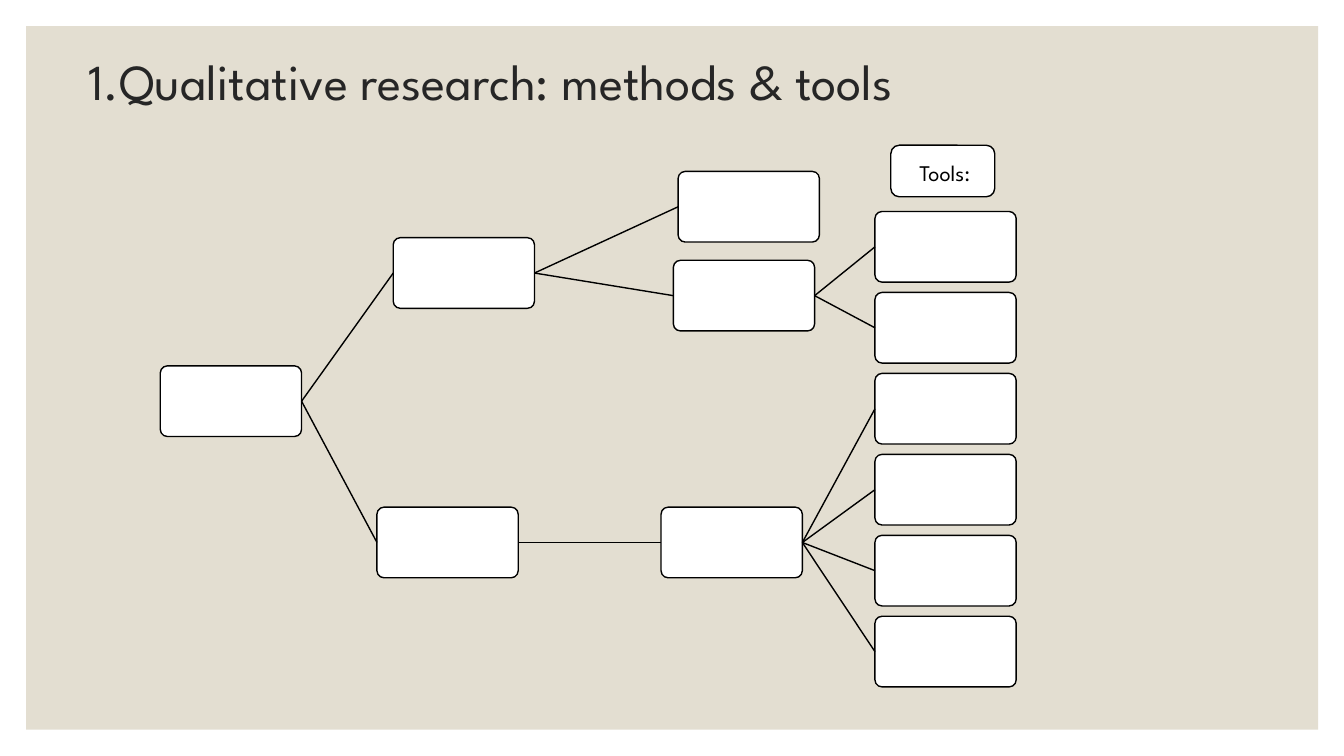
import pptx
import pptx.util
import pptx.dml.color
import pptx.enum.shapes
import pptx.enum.text
import lxml.etree

Cm = pptx.util.Cm
Shape = pptx.enum.shapes.MSO_SHAPE
Align = pptx.enum.text.PP_ALIGN
FONT = "League Spartan"
NODE_W, NODE_H = 3.56, 1.78


def tint(code):
    """Turn a hex string into a colour."""
    return pptx.dml.color.RGBColor.from_string(code)


def write(shape, text, size=16, color="000000", align=Align.LEFT, space=1.0):
    """Put formatted text, centred in height, into a shape."""
    frame = shape.text_frame
    frame.word_wrap = True
    frame.vertical_anchor = pptx.enum.text.MSO_ANCHOR.MIDDLE
    para = frame.paragraphs[0]
    para.alignment = align
    para.line_spacing = space
    run = para.add_run()
    run.text = text
    run.font.name = FONT
    run.font.size = pptx.util.Pt(size)
    run.font.color.rgb = tint(color)


def panel(slide, kind, left, top, width, height, fill="FFFFFF", line="000000"):
    """Add a filled shape, outlined if a line colour is given."""
    shape = slide.shapes.add_shape(kind, Cm(left), Cm(top), Cm(width), Cm(height))
    shape.shadow.inherit = False
    shape.fill.solid()
    shape.fill.fore_color.rgb = tint(fill)
    if line:
        shape.line.color.rgb = tint(line)
        shape.line.width = pptx.util.Pt(1)
    else:
        shape.line.fill.background()
    return shape


def link(slide, start, end):
    """Join the right side of one node to the left side of another."""
    line = slide.shapes.add_connector(
        pptx.enum.shapes.MSO_CONNECTOR.STRAIGHT, 0, 0, 0, 0)
    line.begin_connect(start, 3)
    line.end_connect(end, 1)
    line.line.color.rgb = tint("000000")
    line.line.width = pptx.util.Pt(1)
    props = line.element.spPr
    lxml.etree.SubElement(props, pptx.oxml.ns.qn("a:effectLst"))


def title(slide, left, top, width, height):
    """Write the slide title in the given box."""
    box = slide.shapes.add_textbox(Cm(left), Cm(top), Cm(width), Cm(height))
    write(box, "1.Qualitative research: methods & tools",
          size=36, color="262626", space=0.9)


def tree(slide, left, top):
    """Draw the method tree from its top left corner."""
    spots = {
        "root": (0, 4.9),
        "upper": (5.87, 1.67),
        "lower": (5.46, 8.46),
        "first": (13.05, 0),
        "second": (12.93, 2.24),
        "third": (12.62, 8.46),
    }
    tools = [f"tool {i}" for i in range(6)]
    for i, name in enumerate(tools):
        spots[name] = (18.01, 1.01 + 2.04 * i)
    nodes = {}
    for name, (x, y) in spots.items():
        node = panel(slide, Shape.ROUNDED_RECTANGLE,
                     left + x, top + y, NODE_W, NODE_H)
        node.adjustments[0] = 0.1
        nodes[name] = node
    links = {
        "root": ["upper", "lower"],
        "upper": ["first", "second"],
        "lower": ["third"],
        "second": tools[:2],
        "third": tools[2:],
    }
    for start, ends in links.items():
        for end in ends:
            link(slide, nodes[start], nodes[end])


def label(slide, left, top, width, height):
    """Draw the heading above the column of tools."""
    shape = panel(slide, Shape.ROUNDED_RECTANGLE, left, top, width, height)
    frame = shape.text_frame
    frame.margin_left = frame.margin_top = Cm(0.1)
    frame.margin_right = frame.margin_bottom = 0
    write(shape, "Tools:", align=Align.CENTER)


def main():
    """Build the slide and save it."""
    deck = pptx.Presentation()
    deck.slide_width, deck.slide_height = Cm(33.87), Cm(19.05)
    slide = deck.slides.add_slide(deck.slide_layouts[6])
    slide.background.fill.solid()
    slide.background.fill.fore_color.rgb = tint("FFFFFF")
    panel(slide, Shape.RECTANGLE, 0.66, 0.66, 32.56, 17.73,
          fill="E3DED1", line=None)
    title(slide, 1.98, 1.45, 29.92, 1.35)
    tree(slide, 4.04, 4.32)
    label(slide, 22.45, 3.66, 2.62, 1.3)
    deck.save("out.pptx")


if __name__ == "__main__":
    main()
